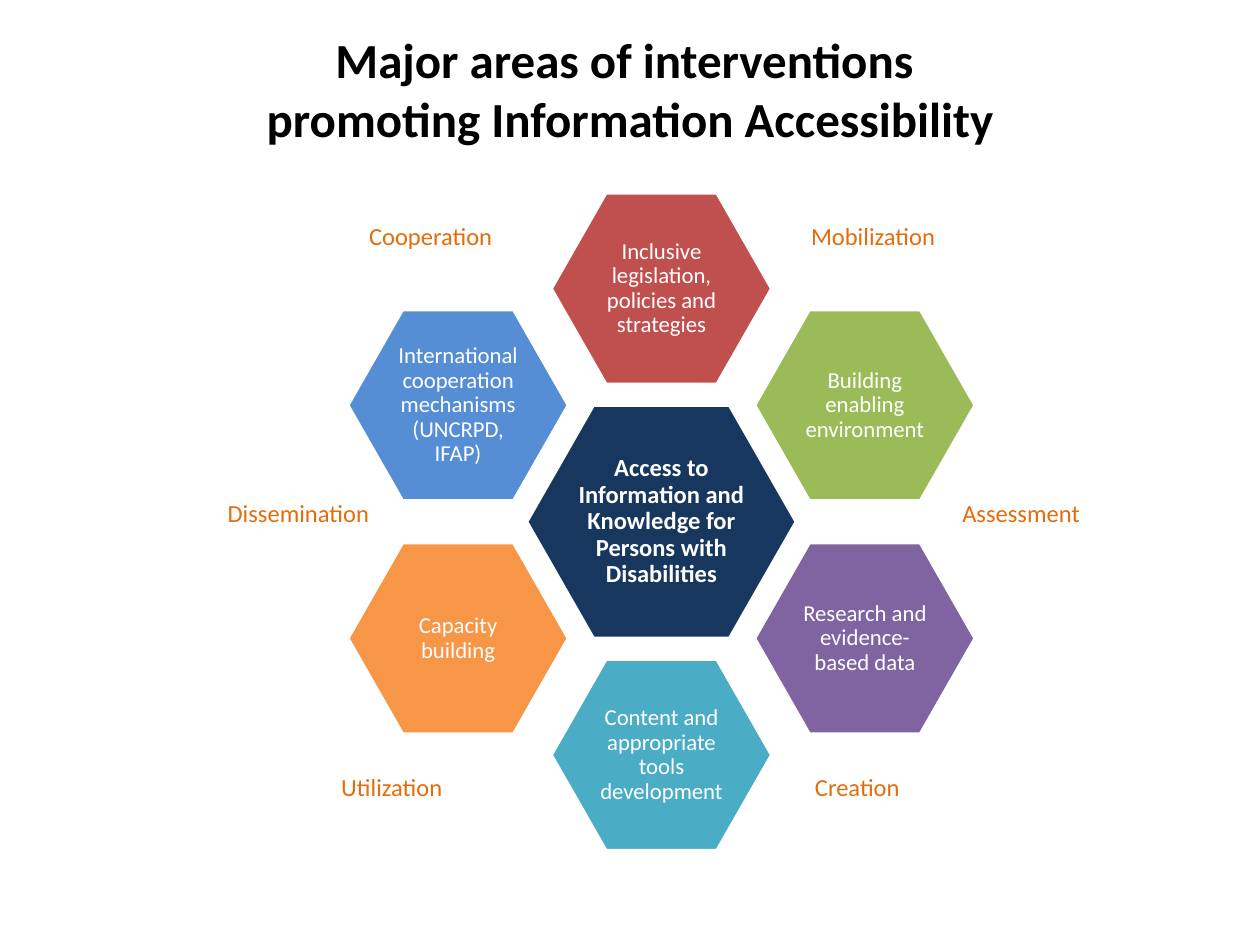
from pptx import Presentation
from pptx.dml.color import RGBColor
from pptx.enum.shapes import MSO_SHAPE
from pptx.enum.text import MSO_ANCHOR, MSO_AUTO_SIZE, PP_ALIGN
from pptx.util import Cm, Pt

HEXAGON = MSO_SHAPE.HEXAGON
MIDDLE = MSO_ANCHOR.MIDDLE
CENTER = PP_ALIGN.CENTER
FIT_SHAPE = MSO_AUTO_SIZE.SHAPE_TO_FIT_TEXT

FONT = "Calibri"
WHITE = "FFFFFF"
LABEL_COLOR = "E46C0A"

HUB = ("Access to Information and Knowledge for Persons with Disabilities", "17375E")
# Column and row steps from the hub, text, fill
AREAS = [
    (0, -2, "Inclusive legislation, policies and strategies", "C0504D"),
    (1, -1, "Building enabling environment", "9BBB59"),
    (1, 1, "Research and evidence-based data", "8064A2"),
    (0, 2, "Content and appropriate tools development", "4BACC6"),
    (-1, 1, "Capacity building", "F79646"),
    (-1, -1, "International cooperation mechanisms (UNCRPD, IFAP)", "558ED5"),
]
# Top of each row in cm, then text, left and width in cm
LABEL_ROWS = [
    (4.34, [("Cooperation", 7.19, 3.02), ("Mobilization", 16.1, 3.05)]),
    (9.91, [("Dissemination", 4.34, 3.4), ("Assessment", 19.15, 2.92)]),
    (15.44, [("Utilization", 6.63, 2.59), ("Creation", 16.18, 2.24)]),
]


def rgb(value):
    return RGBColor.from_string(value)


def style(paragraph, size, color, bold=False):
    font = paragraph.font
    font.name, font.size, font.bold = FONT, Pt(size), bold
    font.color.rgb = rgb(color)


def add_title(slide, left, top, width, height):
    title = slide.shapes.title
    title.left, title.top, title.width, title.height = left, top, width, height
    frame = title.text_frame
    frame.text = "Major areas of interventions \vpromoting Information Accessibility"
    frame.vertical_anchor = MIDDLE
    frame.paragraphs[0].alignment = CENTER
    style(frame.paragraphs[0], 28, "000000", True)


def add_hexagon(slide, center_x, center_y, width, height, text, fill, size, bold=False):
    hexagon = slide.shapes.add_shape(
        HEXAGON, center_x - width // 2, center_y - height // 2, width, height)
    hexagon.adjustments[0] = 0.286
    hexagon.shadow.inherit = False
    hexagon.fill.solid()
    hexagon.fill.fore_color.rgb = rgb(fill)
    hexagon.line.color.rgb = rgb(WHITE)
    hexagon.line.width = Pt(2)
    frame = hexagon.text_frame
    frame.word_wrap = True
    frame.vertical_anchor = MIDDLE
    frame.margin_left = frame.margin_right = Cm(0.05)
    frame.margin_top = frame.margin_bottom = Cm(0.05)
    frame.text = text
    paragraph = frame.paragraphs[0]
    paragraph.alignment = CENTER
    paragraph.line_spacing = 0.9
    style(paragraph, size, WHITE, bold)


def add_hexagon_ring(slide, left, top, width, height):
    """Place the hub in the middle of the box and the six areas around it."""
    center_x, center_y = left + width // 2, top + height // 2
    area_width, area_height = Cm(4.45), Cm(3.86)
    step_x, step_y = (width - area_width) // 2, (height - area_height) // 4
    add_hexagon(slide, center_x, center_y, Cm(5.44), Cm(4.7), *HUB, 14, True)
    for column, row, text, fill in AREAS:
        add_hexagon(slide, center_x + column * step_x, center_y + row * step_y,
                    area_width, area_height, text, fill, 13)


def add_label(slide, left, top, width, height, text):
    label = slide.shapes.add_textbox(left, top, width, height)
    frame = label.text_frame
    frame.word_wrap = False
    frame.auto_size = FIT_SHAPE
    frame.text = text
    style(frame.paragraphs[0], 14, LABEL_COLOR)


def main():
    presentation = Presentation()
    presentation.slide_width, presentation.slide_height = Cm(25.4), Cm(19.05)
    title_only = presentation.slide_layouts[5]
    slide = presentation.slides.add_slide(title_only)
    add_title(slide, Cm(1.27), Cm(0.2), Cm(22.86), Cm(3.18))
    add_hexagon_ring(slide, Cm(7.01), Cm(3.89), Cm(12.65), Cm(13.26))
    for top, labels in LABEL_ROWS:
        for text, left, width in labels:
            add_label(slide, Cm(left), Cm(top), Cm(width), Cm(0.86), text)
    presentation.save("out.pptx")


if __name__ == "__main__":
    main()
